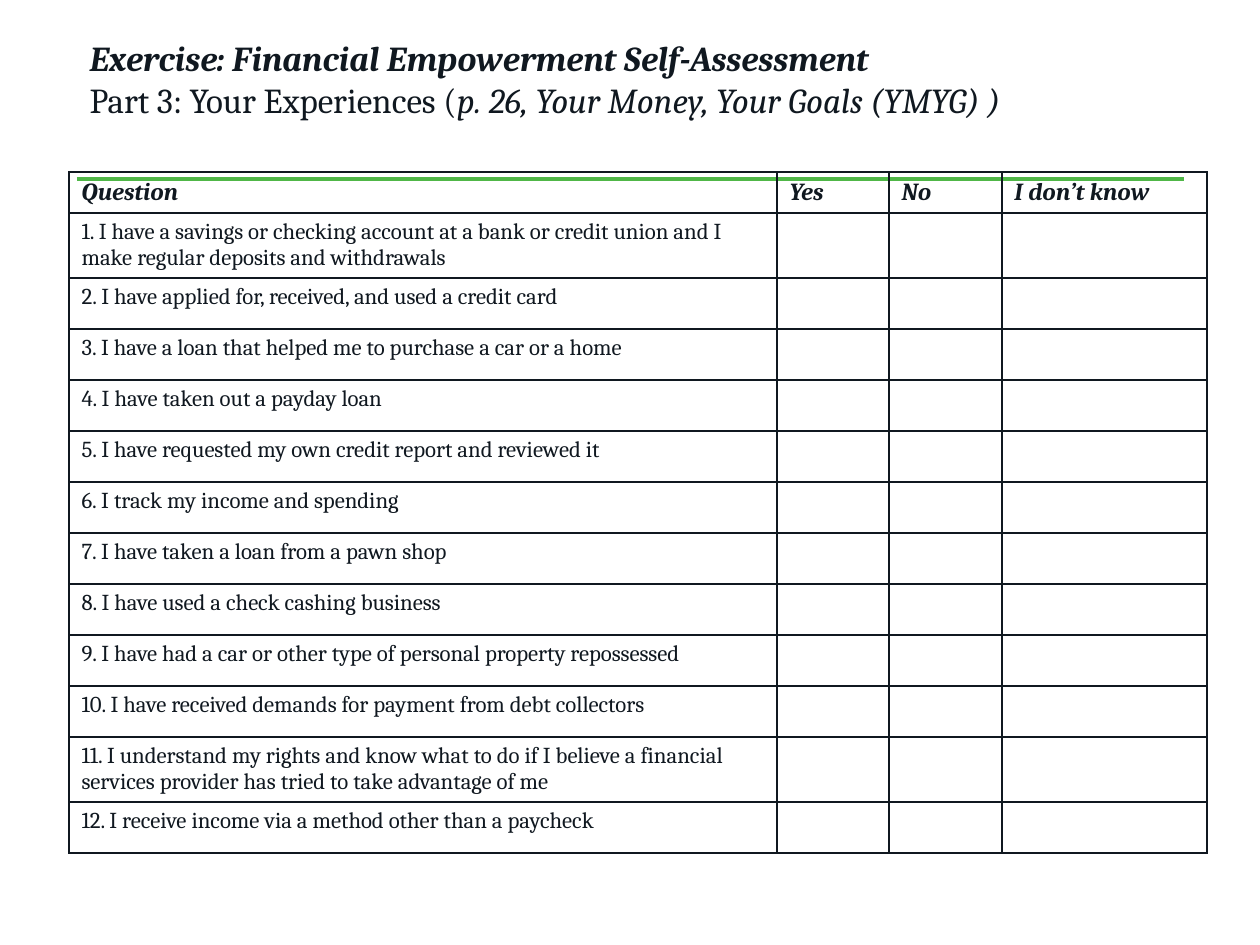
import dataclasses

import lxml.etree
import pptx
import pptx.dml.color
import pptx.enum.shapes
import pptx.enum.text
import pptx.oxml.ns
import pptx.util

SCALE = 914400 / 126
FONT = "Cambria"
COLORS = {"ink": "101820", "rule": "50B748"}
HEADS = ["Question", "Yes", "No", "I don’t know"]
WIDTHS = [708, 112, 113, 205]
HEAD_H, ROW_H, TALL_H = 41, 51, 65


@dataclasses.dataclass
class Item:
    text: str
    height: int = ROW_H


ITEMS = [
    Item("I have a savings or checking account at a bank or credit union "
         "and I make regular deposits and withdrawals", TALL_H),
    Item("I have applied for, received, and used a credit card"),
    Item("I have a loan that helped me to purchase a car or a home"),
    Item("I have taken out a payday loan"),
    Item("I have requested my own credit report and reviewed it"),
    Item("I track my income and spending"),
    Item("I have taken a loan from a pawn shop"),
    Item("I have used a check cashing business"),
    Item("I have had a car or other type of personal property repossessed"),
    Item("I have received demands for payment from debt collectors"),
    Item("I understand my rights and know what to do if I believe a financial "
         "services provider has tried to take advantage of me", TALL_H),
    Item("I receive income via a method other than a paycheck"),
]


def px(size: int) -> pptx.util.Emu:
    return pptx.util.Emu(round(size * SCALE))


def color(name: str) -> pptx.dml.color.RGBColor:
    return pptx.dml.color.RGBColor.from_string(COLORS[name])


def write(para, text: str, *, size: int, bold: bool = False,
          italic: bool = False) -> None:
    run = para.add_run()
    run.text = text
    font = run.font
    font.name, font.size = FONT, pptx.util.Pt(size)
    font.bold, font.italic = bold, italic
    font.color.rgb = color("ink")


def draw_title(slide) -> None:
    title = slide.shapes.title
    title.left, title.top, title.width, title.height = map(
        px, (77, 30, 1107, 135))
    frame = title.text_frame
    frame.word_wrap = True
    frame.auto_size = pptx.enum.text.MSO_AUTO_SIZE.NONE
    frame.vertical_anchor = pptx.enum.text.MSO_ANCHOR.TOP
    para = frame.paragraphs[0]
    para.alignment = pptx.enum.text.PP_ALIGN.LEFT
    write(para, "Exercise: Financial Empowerment Self-Assessment",
          size=20, bold=True, italic=True)
    para.add_line_break()
    write(para, "Part 3: Your Experiences (", size=20)
    write(para, "p. 26, Your Money, Your Goals (YMYG) )", size=20, italic=True)


def draw_rule(slide) -> None:
    line = slide.shapes.add_connector(
        pptx.enum.shapes.MSO_CONNECTOR.STRAIGHT,
        px(77), px(179), px(1184), px(179))
    line.line.color.rgb = color("rule")
    line.line.width = pptx.util.Pt(2)
    props = line._element.spPr
    lxml.etree.SubElement(props, pptx.oxml.ns.qn("a:effectLst"))


def frame_cell(cell) -> None:
    cell.fill.background()
    props = cell._tc.get_or_add_tcPr()
    for index, side in enumerate(("lnL", "lnR", "lnT", "lnB")):
        edge = pptx.oxml.parse_xml(
            f'<a:{side} {pptx.oxml.ns.nsdecls("a")} w="12700"><a:solidFill>'
            f'<a:srgbClr val="{COLORS["ink"]}"/></a:solidFill></a:{side}>')
        props.insert(index, edge)


def draw_table(slide) -> None:
    highs = [HEAD_H] + [item.height for item in ITEMS]
    table = slide.shapes.add_table(
        len(highs), len(WIDTHS), px(69), px(172),
        px(sum(WIDTHS)), px(sum(highs))).table
    table.first_row = table.horz_banding = False
    for col, width in zip(table.columns, WIDTHS):
        col.width = px(width)
    for row, height in zip(table.rows, highs):
        row.height = px(height)
    for cell in table.iter_cells():
        frame_cell(cell)
        cell.text_frame.paragraphs[0].font.size = pptx.util.Pt(13)
    for col, head in enumerate(HEADS):
        write(table.cell(0, col).text_frame.paragraphs[0], head,
              size=14, bold=True, italic=True)
    for num, item in enumerate(ITEMS, 1):
        write(table.cell(num, 0).text_frame.paragraphs[0],
              f"{num}. {item.text}", size=13)


def main() -> None:
    deck = pptx.Presentation()
    deck.slide_width, deck.slide_height = px(1260), px(945)
    slide = deck.slides.add_slide(deck.slide_layouts[5])
    draw_rule(slide)
    draw_title(slide)
    draw_table(slide)
    deck.save("out.pptx")


if __name__ == "__main__":
    main()
